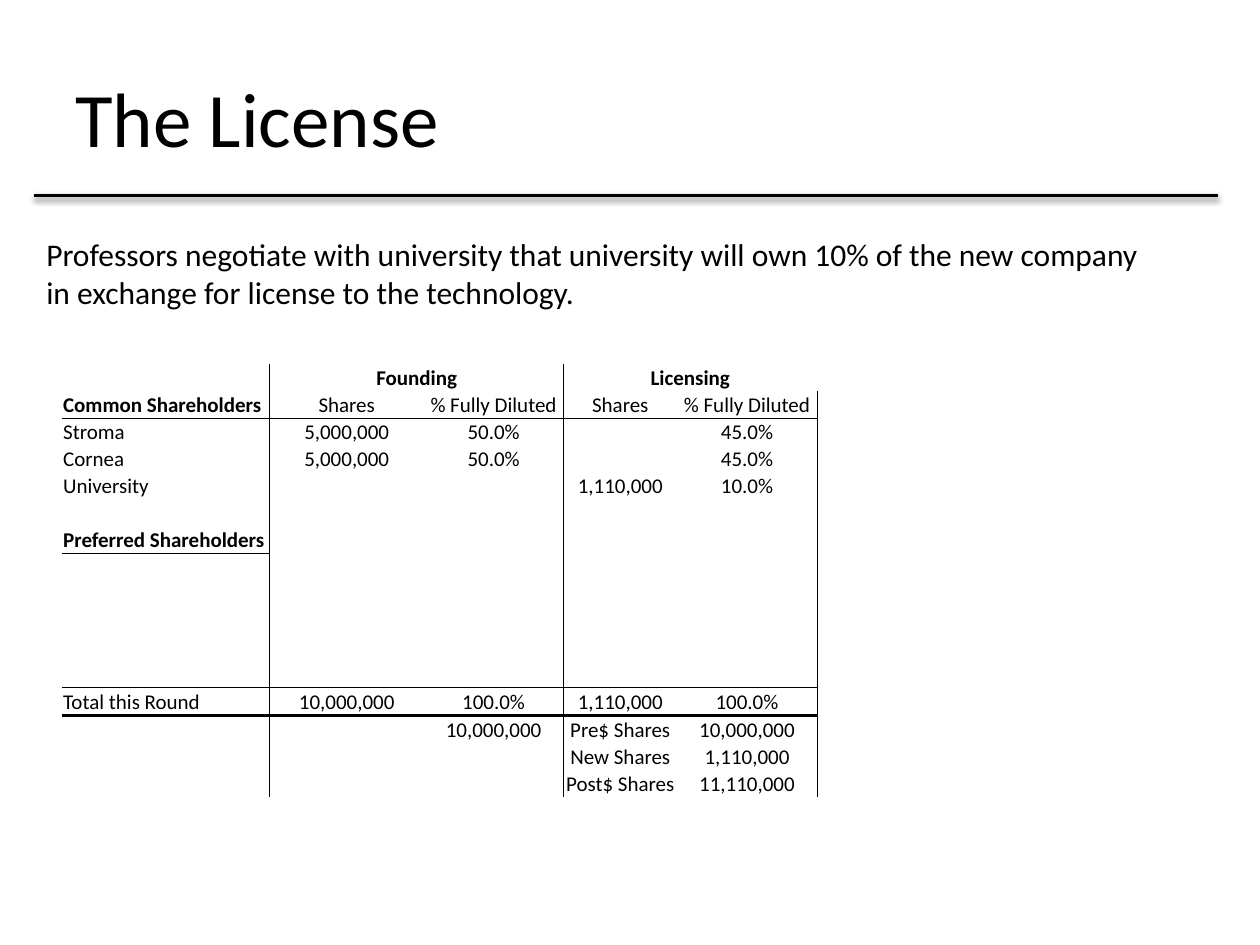
from dataclasses import dataclass

from lxml.etree import SubElement
from pptx import Presentation
from pptx.dml.color import RGBColor
from pptx.enum.shapes import MSO_CONNECTOR
from pptx.enum.text import MSO_ANCHOR, MSO_AUTO_SIZE, PP_ALIGN
from pptx.oxml.ns import qn
from pptx.slide import Slide
from pptx.table import Table, _Cell
from pptx.text.text import _Paragraph
from pptx.util import Pt

COLORS = {"ink": "000000"}
FONT = "Calibri"
TABLE_SIZE = 12
THIN, THICK = 0.5, 2
COLUMN_WIDTHS = [118.8, 87.9, 80, 64.8, 80]
ROW_HEIGHT, TOTAL_ROW_HEIGHT = 15.4, 15.8
ROW_COUNT = 16
COMMON_ROW, PREFERRED_ROW, LAST_HOLDER_ROW, TOTAL_ROW = 1, 6, 11, 12
FULL_RULES = {COMMON_ROW: THIN, LAST_HOLDER_ROW: THIN, TOTAL_ROW: THICK}
GROUP_ENDS = {0, 2, 4}
BOLD_TEXTS = {"Founding", "Licensing", "Common Shareholders", "Preferred Shareholders"}
ROWS = {
    0: ["", "Founding", "", "Licensing", ""],
    1: ["Common Shareholders", "Shares", "% Fully Diluted", "Shares", "% Fully Diluted"],
    2: ["Stroma", "5,000,000", "50.0%", "", "45.0%"],
    3: ["Cornea", "5,000,000", "50.0%", "", "45.0%"],
    4: ["University", "", "", "1,110,000", "10.0%"],
    6: ["Preferred Shareholders", "", "", "", ""],
    12: ["Total this Round", "10,000,000", "100.0%", "1,110,000", "100.0%"],
    13: ["", "", "10,000,000", "Pre$ Shares", "10,000,000"],
    14: ["", "", "", "New Shares", "1,110,000"],
    15: ["", "", "", "Post$ Shares", "11,110,000"],
}


@dataclass(frozen=True)
class TextBlock:
    text: str
    left: float
    top: float
    width: float
    height: float
    size: float
    anchor: MSO_ANCHOR
    auto_size: MSO_AUTO_SIZE


TEXT_BLOCKS = [
    TextBlock("The License", 36, 21.6, 648, 90, 44, MSO_ANCHOR.MIDDLE, MSO_AUTO_SIZE.NONE),
    TextBlock(
        "Professors negotiate with university that university will own 10% of the new company "
        "in exchange for license to the technology.",
        19.4, 131, 648, 51, 18, MSO_ANCHOR.TOP, MSO_AUTO_SIZE.SHAPE_TO_FIT_TEXT,
    ),
]


def style_paragraph(paragraph: _Paragraph, size: float, bold: bool = False) -> None:
    paragraph.font.name = FONT
    paragraph.font.size = Pt(size)
    paragraph.font.bold = bold
    paragraph.font.color.rgb = RGBColor.from_string(COLORS["ink"])


def add_text(slide: Slide, block: TextBlock) -> None:
    shape = slide.shapes.add_textbox(
        Pt(block.left), Pt(block.top), Pt(block.width), Pt(block.height)
    )
    frame = shape.text_frame
    frame.word_wrap = True
    frame.auto_size = block.auto_size
    frame.vertical_anchor = block.anchor
    frame.text = block.text
    style_paragraph(frame.paragraphs[0], block.size)


def add_title_rule(slide: Slide) -> None:
    rule = slide.shapes.add_connector(
        MSO_CONNECTOR.STRAIGHT, Pt(19.2), Pt(111.6), Pt(695.8), Pt(111.6)
    )
    rule.line.width = Pt(2)
    rule.line.color.rgb = RGBColor.from_string(COLORS["ink"])
    effects = SubElement(rule._element.spPr, qn("a:effectLst"))
    shadow = SubElement(
        effects, qn("a:outerShdw"), blurRad=str(Pt(3.1)), dist=str(Pt(1.6)),
        dir="5400000", rotWithShape="0",
    )
    color = SubElement(shadow, qn("a:srgbClr"), val=COLORS["ink"])
    SubElement(color, qn("a:alpha"), val="38000")


def rule_below(row: int, column: int) -> float:
    if row == PREFERRED_ROW and column == 0:
        return THIN
    return FULL_RULES.get(row, 0)


def rule_after(column: int) -> float:
    return THIN if column in GROUP_ENDS else 0


def set_borders(cell: _Cell, row: int, column: int) -> None:
    widths = {
        "lnL": rule_after(column - 1),
        "lnR": rule_after(column),
        "lnT": rule_below(row - 1, column),
        "lnB": rule_below(row, column),
    }
    properties = cell._tc.get_or_add_tcPr()
    for side, width in widths.items():
        border = SubElement(properties, qn(f"a:{side}"), w=str(Pt(width)))
        if width:
            fill = SubElement(border, qn("a:solidFill"))
            SubElement(fill, qn("a:srgbClr"), val=COLORS["ink"])
        else:
            SubElement(border, qn("a:noFill"))


def fill_cell(table: Table, row: int, column: int, text: str) -> None:
    cell = table.cell(row, column)
    cell.margin_left = cell.margin_right = cell.margin_top = Pt(0.7)
    cell.margin_bottom = Pt(0)
    cell.vertical_anchor = MSO_ANCHOR.BOTTOM
    set_borders(cell, row, column)
    cell.fill.background()
    cell.text = text
    paragraph = cell.text_frame.paragraphs[0]
    paragraph.alignment = PP_ALIGN.CENTER if column else PP_ALIGN.LEFT
    style_paragraph(paragraph, TABLE_SIZE, text in BOLD_TEXTS)
    if not text:
        paragraph._p.get_or_add_endParaRPr().set("sz", str(TABLE_SIZE * 100))


def add_share_table(slide: Slide) -> None:
    heights = [
        TOTAL_ROW_HEIGHT if row in (TOTAL_ROW, TOTAL_ROW + 1) else ROW_HEIGHT
        for row in range(ROW_COUNT)
    ]
    table = slide.shapes.add_table(
        ROW_COUNT, len(COLUMN_WIDTHS), Pt(35.4), Pt(208.2),
        Pt(sum(COLUMN_WIDTHS)), Pt(sum(heights)),
    ).table
    table.first_row = table.horz_banding = False
    for column, width in enumerate(COLUMN_WIDTHS):
        table.columns[column].width = Pt(width)
    for row, height in enumerate(heights):
        table.rows[row].height = Pt(height)
        for column, text in enumerate(ROWS.get(row, [""] * len(COLUMN_WIDTHS))):
            fill_cell(table, row, column, text)
    for column in (1, 3):
        table.cell(0, column).merge(table.cell(0, column + 1))


def main() -> None:
    """Build the slide on the license and its share table."""
    presentation = Presentation()
    presentation.slide_width, presentation.slide_height = Pt(720), Pt(540)
    slide = presentation.slides.add_slide(presentation.slide_layouts[6])
    for block in TEXT_BLOCKS:
        add_text(slide, block)
    add_title_rule(slide)
    add_share_table(slide)
    presentation.save("out.pptx")


if __name__ == "__main__":
    main()
